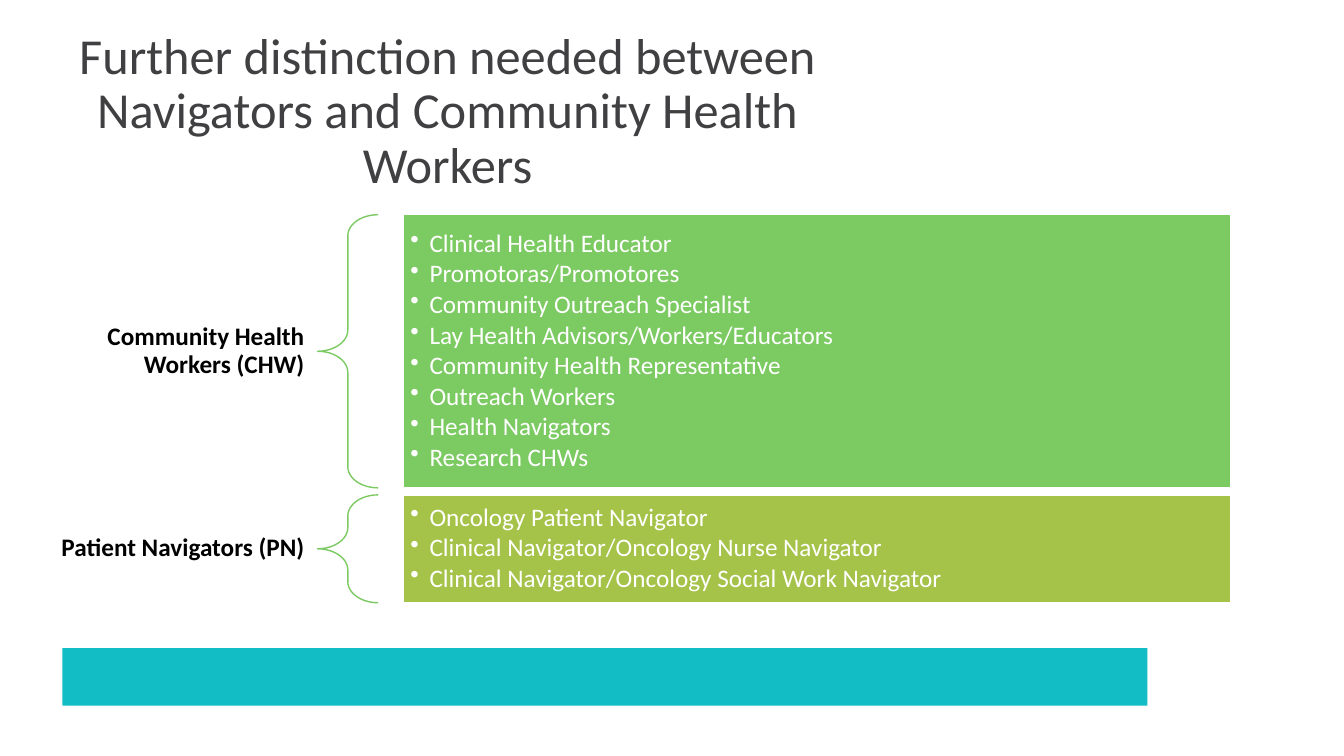
from lxml.etree import SubElement
from pptx import Presentation
from pptx.dml.color import RGBColor
from pptx.enum.shapes import MSO_SHAPE as Shape
from pptx.enum.text import MSO_ANCHOR as Anchor, MSO_AUTO_SIZE as AutoSize, PP_ALIGN as Align
from pptx.oxml.ns import qn
from pptx.util import Inches, Pt

FONT = "Calibri"
GREEN, OLIVE, TEAL = "7CCA62", "A5C249", "13BDC6"
WHITE, BLACK, CHARCOAL = "FFFFFF", "000000", "403F41"

# label, top, height, panel colour, roles
GROUPS = [
    ("Community Health Workers (CHW)", 2.13, 2.71, GREEN, [
        "Clinical Health Educator",
        "Promotoras/Promotores",
        "Community Outreach Specialist",
        "Lay Health Advisors/Workers/Educators",
        "Community Health Representative",
        "Outreach Workers",
        "Health Navigators",
        "Research CHWs",
    ]),
    ("Patient Navigators (PN)", 4.91, 1.07, OLIVE, [
        "Oncology Patient Navigator",
        "Clinical Navigator/Oncology Nurse Navigator",
        "Clinical Navigator/Oncology Social Work Navigator",
    ]),
]


def rgb(color):
    return RGBColor.from_string(color)


def box(left, top, width, height):
    return [Inches(length) for length in (left, top, width, height)]


def set_frame(frame, side, edge):
    frame.word_wrap = True
    frame.auto_size = AutoSize.NONE
    frame.vertical_anchor = Anchor.MIDDLE
    frame.margin_left = frame.margin_right = Inches(side)
    frame.margin_top = frame.margin_bottom = Inches(edge)


def write(paragraph, text, size, color, align, bold=False):
    paragraph.alignment = align
    paragraph.line_spacing = 0.9
    paragraph.space_before = Pt(0)
    run = paragraph.add_run()
    run.text = text
    run.font.name = FONT
    run.font.size = Pt(size)
    run.font.bold = bold
    run.font.color.rgb = rgb(color)


def add_bullet(paragraph, indent):
    properties = paragraph._p.get_or_add_pPr()
    properties.set("marL", str(Inches(indent)))
    properties.set("indent", str(-Inches(indent)))
    SubElement(properties, qn("a:buChar"), char="•")


def add_shape(slide, kind, place, fill=None, line=None):
    shape = slide.shapes.add_shape(kind, *box(*place))
    shape.shadow.inherit = False
    if fill:
        shape.fill.solid()
        shape.fill.fore_color.rgb = rgb(fill)
    else:
        shape.fill.background()
    if line:
        shape.line.color.rgb = rgb(line)
        shape.line.width = Pt(1)
    else:
        shape.line.fill.background()
    return shape


def add_title(slide, text):
    title = slide.shapes.title
    title.left, title.top, title.width, title.height = box(0.13, 0.39, 8.62, 1.45)
    set_frame(title.text_frame, 0.1, 0.05)
    write(title.text_frame.paragraphs[0], text, 36, CHARCOAL, Align.CENTER)


def add_label(slide, text, middle):
    height = 0.66
    label = slide.shapes.add_textbox(*box(0.14, middle - height / 2, 3.02, height))
    set_frame(label.text_frame, 0.14, 0.05)
    write(label.text_frame.paragraphs[0], text, 18, BLACK, Align.RIGHT, bold=True)


def add_brace(slide, top, height):
    brace = add_shape(slide, Shape.LEFT_BRACE, (3.15, top, 0.6, height), line=GREEN)
    brace.adjustments[0] = 0.35
    brace.adjustments[1] = 0.5


def add_role_panel(slide, top, height, color, roles):
    panel = add_shape(slide, Shape.RECTANGLE, (4, top, 8.21, height), color, WHITE)
    frame = panel.text_frame
    set_frame(frame, 0.07, 0.07)
    for index, role in enumerate(roles):
        paragraph = frame.add_paragraph() if index else frame.paragraphs[0]
        paragraph.level = 1
        paragraph.space_after = Pt(2.4)
        write(paragraph, role, 18, WHITE, Align.LEFT)
        add_bullet(paragraph, 0.19)


def main():
    deck = Presentation()
    deck.slide_width, deck.slide_height = Inches(13.33), Inches(7.5)
    slide = deck.slides.add_slide(deck.slide_layouts[5])

    add_shape(slide, Shape.RECTANGLE, (0.62, 6.43, 10.76, 0.57), TEAL)
    add_title(slide, "Further distinction needed between Navigators and Community Health Workers")
    for label, top, height, color, roles in GROUPS:
        add_label(slide, label, top + height / 2)
        add_brace(slide, top, height)
        add_role_panel(slide, top, height, color, roles)

    deck.save("out.pptx")


if __name__ == "__main__":
    main()
